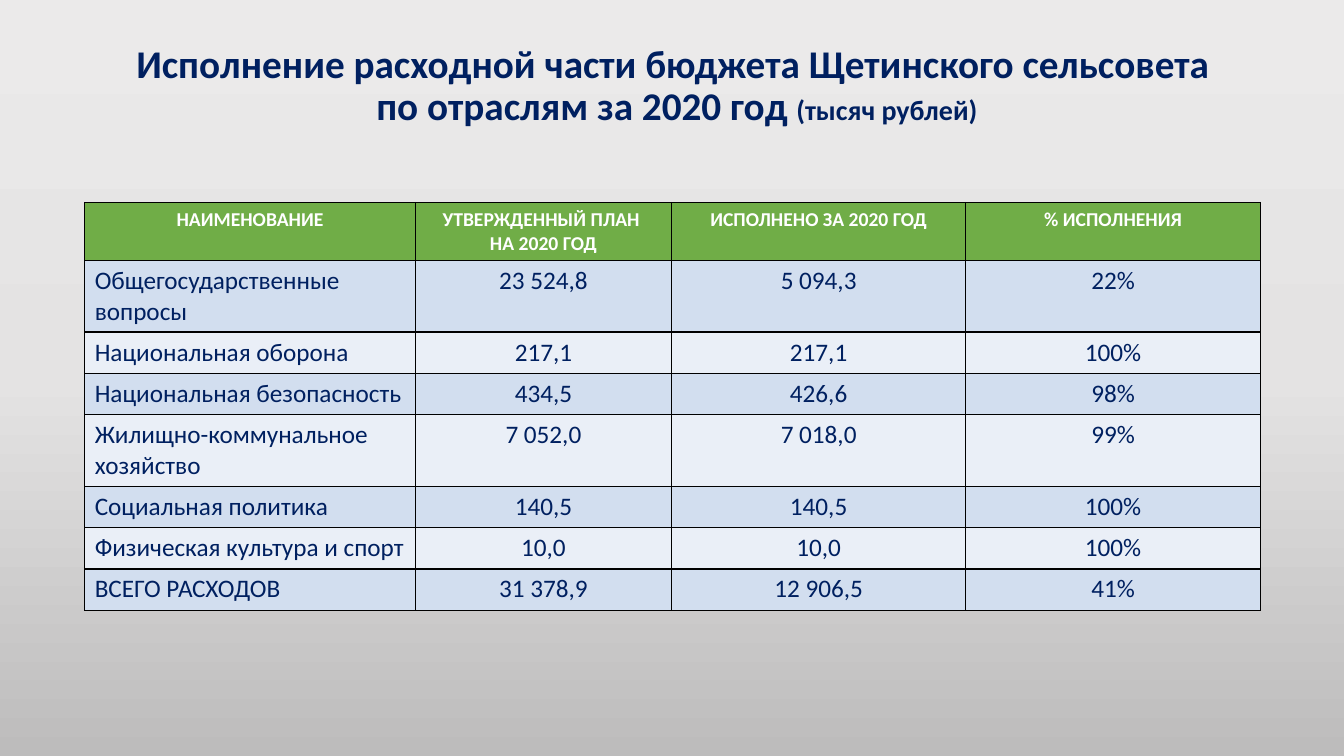
import pptx
import pptx.util
import pptx.dml.color
import pptx.enum.text
import pptx.oxml
import pptx.oxml.ns
import copy

TITLE = (
    "Исполнение расходной части бюджета Щетинского сельсовета",
    " по отраслям за 2020 год ",
    "(тысяч рублей)",
)
HEAD = ("НАИМЕНОВАНИЕ", "УТВЕРЖДЕННЫЙ ПЛАН \nНА 2020 ГОД", "ИСПОЛНЕНО ЗА 2020 ГОД", "% ИСПОЛНЕНИЯ")
ROWS = [
    ("Общегосударственные вопросы", "23 524,8", "5 094,3", "22%"),
    ("Национальная оборона", "217,1", "217,1", "100%"),
    ("Национальная безопасность", "434,5", "426,6", "98%"),
    ("Жилищно-коммунальное хозяйство", "7 052,0", "7 018,0", "99%"),
    ("Социальная политика", "140,5", "140,5", "100%"),
    ("Физическая культура и спорт", "10,0", "10,0", "100%"),
    ("ВСЕГО РАСХОДОВ", "31 378,9", "12 906,5", "41%"),
]
COLS = (3.28, 2.54, 2.92, 2.92)
ROW = 0.41
THEME = {
    "font": "Calibri", "ink": "002060", "white": "FFFFFF", "line": "000000",
    "head": "70AD47", "bands": ("D2DEEF", "EAEFF7"),
    "back": ((0, "EBEAEA"), (0.5, "E4E3E3"), (1, "BDBCBC")),
    "title": 28, "note": 20, "label": 14, "body": 18, "rule": 1,
}

Inch = pptx.util.Inches
Point = pptx.util.Pt
Align = pptx.enum.text.PP_ALIGN


def color(name):
    return pptx.dml.color.RGBColor.from_string(name)


def style(font, size, ink, bold):
    font.name = THEME["font"]
    font.size = Point(size)
    font.bold = bold
    font.color.rgb = color(ink)


def paint_back(slide):
    fill = slide.background.fill
    fill.gradient()
    fill.gradient_angle = 270
    stops = slide.element.xpath(".//a:gsLst")[0]
    stops.append(copy.deepcopy(stops[-1]))
    for stop, (place, tone) in zip(fill.gradient_stops, THEME["back"]):
        stop.position = place
        stop.color.rgb = color(tone)


def add_title(slide):
    title = slide.shapes.title
    title.left, title.top, title.width, title.height = map(Inch, (0.92, 0.4, 11.5, 0.92))
    frame = title.text_frame
    frame.auto_size = pptx.enum.text.MSO_AUTO_SIZE.NONE
    frame.vertical_anchor = pptx.enum.text.MSO_ANCHOR.MIDDLE
    para = frame.paragraphs[0]
    para.alignment = Align.CENTER
    para.line_spacing = 0.9
    style(para.font, THEME["title"], THEME["ink"], True)
    first, second, note = TITLE
    para.add_run().text = first
    para.add_line_break()
    para.add_run().text = second
    run = para.add_run()
    run.text = note
    run.font.size = Point(THEME["note"])


def add_edges(cell):
    props = cell._tc.get_or_add_tcPr()
    space = pptx.oxml.ns.nsdecls("a")
    width = Point(THEME["rule"])
    for spot, side in enumerate("LRTB"):
        props.insert(spot, pptx.oxml.parse_xml(
            f'<a:ln{side} {space} w="{width}"><a:solidFill>'
            f'<a:srgbClr val="{THEME["line"]}"/></a:solidFill></a:ln{side}>'))


def fill_cell(cell, text, tone, size, ink, bold, align):
    cell.fill.solid()
    cell.fill.fore_color.rgb = color(tone)
    add_edges(cell)
    cell.text = text
    for para in cell.text_frame.paragraphs:
        para.alignment = align
        style(para.font, size, ink, bold)


def add_budget(slide):
    count = len(ROWS) + 1
    frame = slide.shapes.add_table(
        count, len(COLS), Inch(0.84), Inch(2.01), Inch(sum(COLS)), Inch(ROW * count))
    table = frame.table
    table.horz_banding = False
    table.first_row = True
    for col, width in zip(table.columns, COLS):
        col.width = Inch(width)
    for r, texts in enumerate([HEAD] + ROWS):
        table.rows[r].height = Inch(ROW)
        if r == 0:
            look = THEME["head"], THEME["label"], THEME["white"], True
        else:
            look = THEME["bands"][(r - 1) % 2], THEME["body"], THEME["ink"], False
        for c, text in enumerate(texts):
            align = Align.LEFT if r and c == 0 else Align.CENTER
            fill_cell(table.cell(r, c), text, *look, align)


def main():
    deck = pptx.Presentation()
    deck.slide_width, deck.slide_height = Inch(13.33), Inch(7.5)
    slide = deck.slides.add_slide(deck.slide_layouts[5])
    paint_back(slide)
    add_title(slide)
    add_budget(slide)
    deck.save("out.pptx")


if __name__ == "__main__":
    main()
